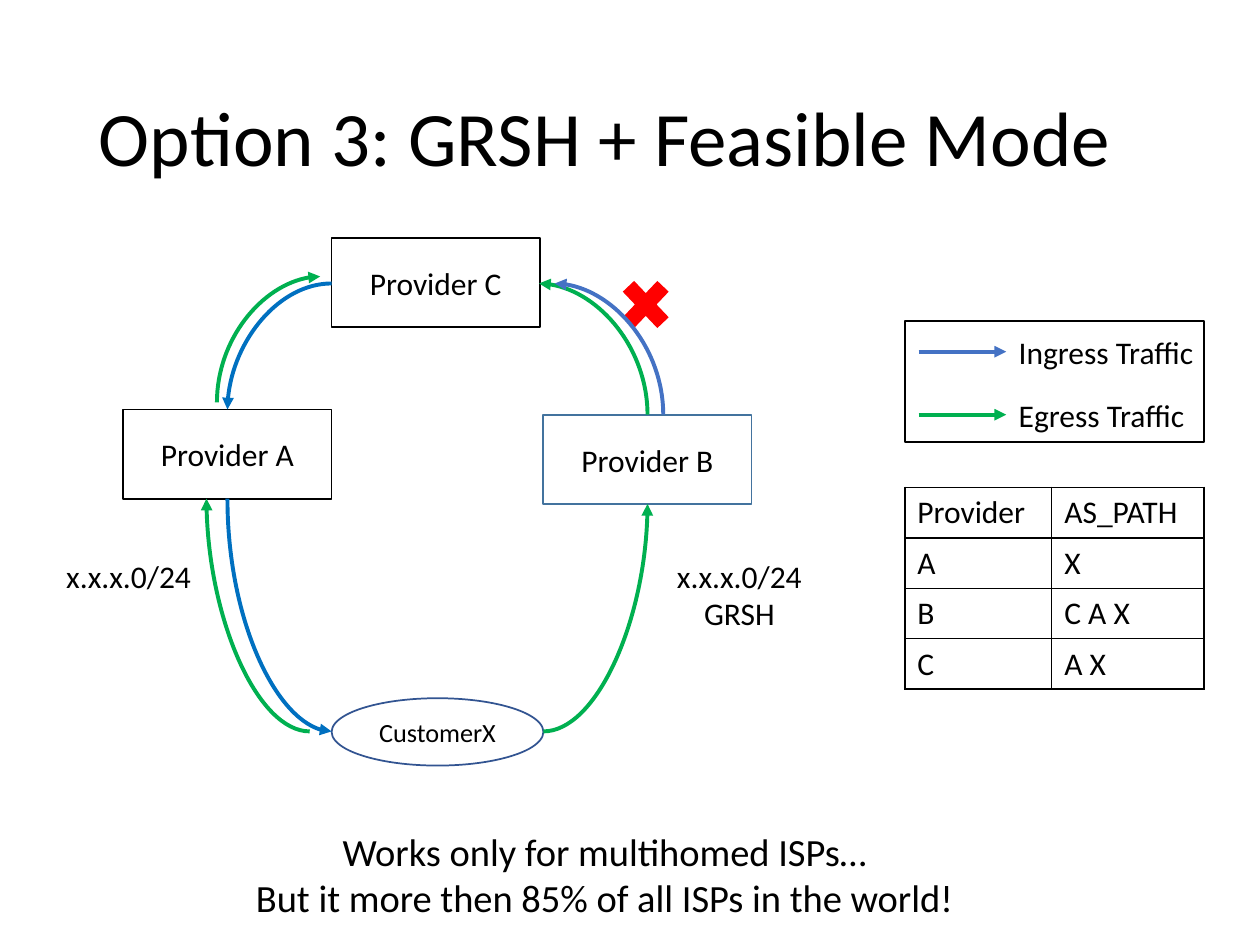
from dataclasses import dataclass

from lxml import etree
from pptx import Presentation
from pptx.dml.color import RGBColor
from pptx.enum.shapes import MSO_CONNECTOR, MSO_SHAPE
from pptx.enum.text import MSO_ANCHOR, PP_ALIGN
from pptx.oxml.ns import qn
from pptx.util import Pt

RECT, OVAL, CROSS = MSO_SHAPE.RECTANGLE, MSO_SHAPE.OVAL, MSO_SHAPE.MATH_MULTIPLY
STRAIGHT, CURVE = MSO_CONNECTOR.STRAIGHT, MSO_CONNECTOR.CURVE
LEFT, CENTER = PP_ALIGN.LEFT, PP_ALIGN.CENTER
TOP, MIDDLE = MSO_ANCHOR.TOP, MSO_ANCHOR.MIDDLE

FONT = "Calibri"
COLORS = {
    "black": "000000",
    "egress": "00B050",
    "ingress": "4472C4",
    "ingress_a": "0070C0",
    "provider_b": "43739E",
    "customer": "325491",
    "blocked": "FF0000",
}


@dataclass
class Node:
    label: str
    left: float
    top: float
    width: float = 119
    height: float = 51
    line: str = "black"
    kind: int = RECT
    size: float = 18


@dataclass
class Label:
    lines: list[str]
    left: float
    top: float
    width: float
    height: float
    size: float = 18
    align: int = CENTER
    anchor: int = TOP
    spacing: float = 1.0


@dataclass
class Arc:
    """Quarter curve: leaves side level, reaches foot upright."""
    side: tuple[float, float]
    foot: tuple[float, float]
    color: str
    arrow_at_foot: bool


def rgb(name: str) -> RGBColor:
    return RGBColor.from_string(COLORS[name])


def write(frame, lines: list[str], size: float, align: int, spacing: float = 1.0) -> None:
    for index, line in enumerate(lines):
        paragraph = frame.paragraphs[0] if index == 0 else frame.add_paragraph()
        paragraph.alignment = align
        paragraph.line_spacing = spacing
        run = paragraph.add_run()
        run.text = line
        run.font.name = FONT
        run.font.size = Pt(size)
        run.font.color.rgb = rgb("black")


def draw_label(shapes, label: Label) -> None:
    box = shapes.add_textbox(Pt(label.left), Pt(label.top), Pt(label.width), Pt(label.height))
    frame = box.text_frame
    frame.word_wrap = True
    frame.vertical_anchor = label.anchor
    write(frame, label.lines, label.size, label.align, label.spacing)


def draw_node(shapes, node: Node) -> None:
    shape = shapes.add_shape(node.kind, Pt(node.left), Pt(node.top), Pt(node.width), Pt(node.height))
    shape.shadow.inherit = False
    shape.fill.background()
    shape.line.color.rgb = rgb(node.line)
    shape.line.width = Pt(1)
    if node.label:
        shape.text_frame.vertical_anchor = MIDDLE
        write(shape.text_frame, [node.label], node.size, CENTER)


def draw_arrow(shapes, kind: int, start: tuple[float, float], end: tuple[float, float],
               color: str, arrow_at_end: bool = True):
    arrow = shapes.add_connector(kind, *(Pt(value) for value in (*start, *end)))
    arrow.line.color.rgb = rgb(color)
    arrow.line.width = Pt(2.25)
    tag = "a:tailEnd" if arrow_at_end else "a:headEnd"
    etree.SubElement(arrow.line._get_or_add_ln(), qn(tag), type="triangle")
    etree.SubElement(arrow._element.spPr, qn("a:effectLst"))
    return arrow


def draw_arc(shapes, arc: Arc) -> None:
    arrow = draw_arrow(shapes, CURVE, arc.side, arc.foot, arc.color, arc.arrow_at_foot)
    arrow._element.spPr.find(qn("a:prstGeom")).set("prst", "curvedConnector2")


def style_cell(cell, text: str) -> None:
    write(cell.text_frame, [text], 18, LEFT)
    properties = cell._tc.get_or_add_tcPr()
    for side in ("a:lnL", "a:lnR", "a:lnT", "a:lnB"):
        border = etree.SubElement(properties, qn(side), w=str(Pt(1)))
        fill = etree.SubElement(border, qn("a:solidFill"))
        etree.SubElement(fill, qn("a:srgbClr"), val=COLORS["black"])
    cell.fill.background()


def draw_table(shapes, rows: list[tuple[str, str]], left: float, top: float,
               widths: list[float], row_height: float) -> None:
    table = shapes.add_table(len(rows), len(widths), Pt(left), Pt(top),
                             Pt(sum(widths)), Pt(row_height * len(rows))).table
    table.first_row = False
    table.horz_banding = False
    for column, width in zip(table.columns, widths):
        column.width = Pt(width)
    for row_index, row in enumerate(rows):
        for column_index, text in enumerate(row):
            style_cell(table.cell(row_index, column_index), text)


LABELS = [
    Label(["Option 3: GRSH + Feasible Mode"], 49.5, 29, 621, 104, 44, LEFT, MIDDLE, 0.9),
    Label(["Works only for multihomed ISPs…",
           "But it more then 85% of all ISPs in the world!"], 46, 469.5, 599, 60.5, 22),
    Label(["x.x.x.0/24"], 25, 314.5, 97, 29),
    Label(["x.x.x.0/24", "GRSH"], 376, 314.5, 93, 51),
]
NODES = [
    Node("Provider A", 70.5, 234),
    Node("Provider B", 310.5, 237, line="provider_b"),
    Node("Provider C", 189.5, 136),
    Node("CustomerX", 189.5, 399, 121, 38.5, "customer", OVAL, 15),
]
ARCS = [
    # Customer and its two providers
    Arc((310.5, 418), (370, 288), "egress", True),
    Arc((189.5, 418), (130, 285), "ingress_a", False),
    Arc((177, 418), (118, 285), "egress", True),
    # Provider C and the two providers below it
    Arc((189.5, 162), (130, 234), "ingress_a", True),
    Arc((183, 158), (124, 230), "egress", False),
    Arc((308, 162), (370, 237), "egress", False),
    Arc((317, 162), (379, 237), "ingress", False),
]
# The customer's ingress curve points at the customer
LEGEND = [("Ingress Traffic", "ingress"), ("Egress Traffic", "egress")]
ROUTES = [("Provider", "AS_PATH"), ("A", "X"), ("B", "C A X"), ("C", "A X")]


def main() -> None:
    deck = Presentation()
    deck.slide_width, deck.slide_height = Pt(720), Pt(540)
    shapes = deck.slides.add_slide(deck.slide_layouts[6]).shapes

    # Title, closing remark and prefixes
    for label in LABELS:
        draw_label(shapes, label)

    # Network nodes
    for node in NODES:
        draw_node(shapes, node)

    # Mark on the blocked ingress path
    blocked = shapes.add_shape(CROSS, Pt(350), Pt(154), Pt(38), Pt(40))
    blocked.shadow.inherit = False
    blocked.fill.solid()
    blocked.fill.fore_color.rgb = rgb("blocked")
    blocked.line.fill.background()

    # Traffic flows
    for arc in ARCS:
        draw_arc(shapes, arc)

    # Legend
    for index, (text, color) in enumerate(LEGEND):
        y = 201 + 36 * index
        draw_arrow(shapes, STRAIGHT, (525, y), (575, y), color)
        draw_label(shapes, Label([text], 575, y - 14.5, 132, 29, align=LEFT))
    draw_node(shapes, Node("", 517, 183.5, 171, 69))

    # Routes by provider
    draw_table(shapes, ROUTES, 517, 278.5, [84, 87], 28.8)

    deck.save("out.pptx")


if __name__ == "__main__":
    main()
